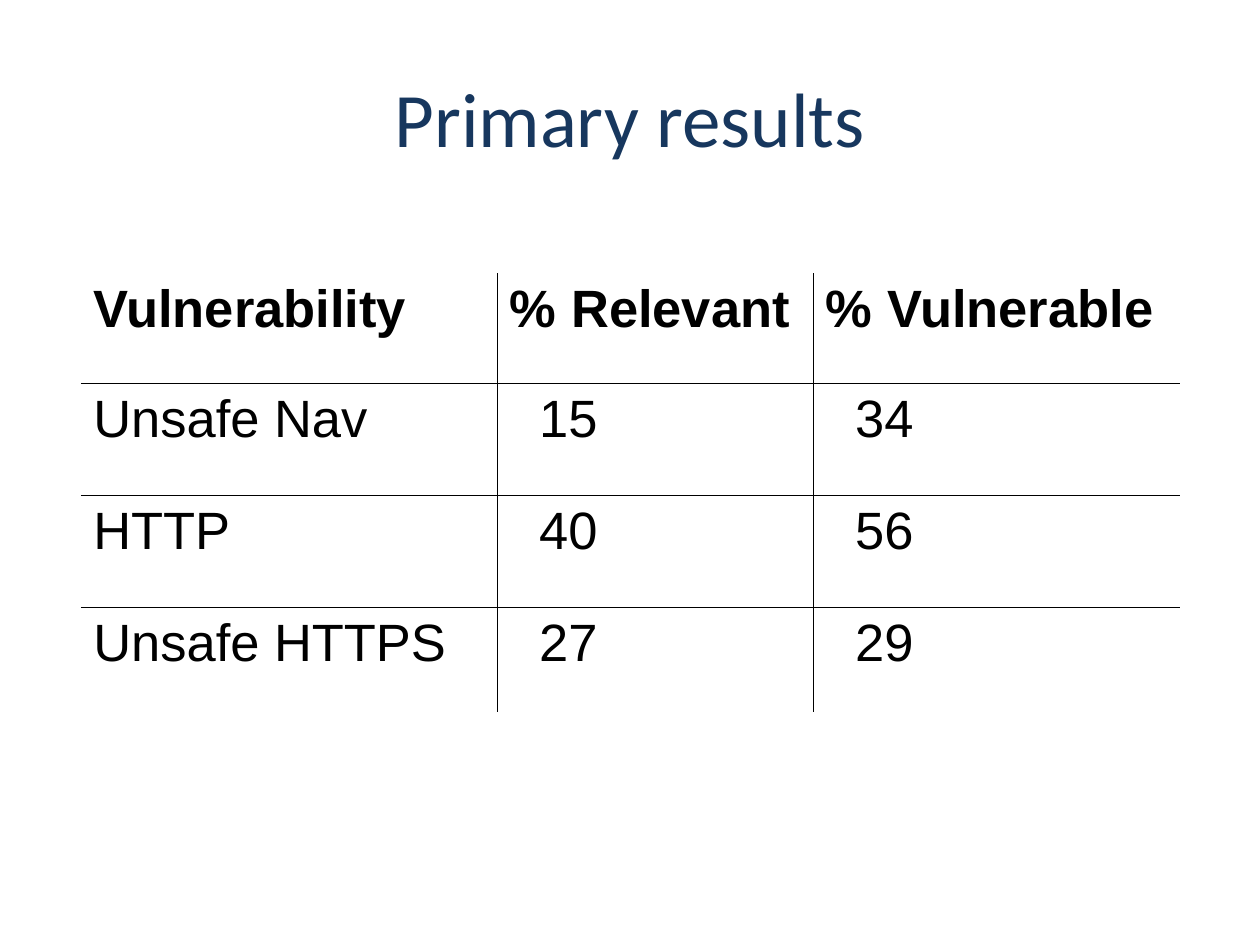
from lxml import etree
from pptx import Presentation
from pptx.dml.color import RGBColor
from pptx.enum.text import MSO_ANCHOR, PP_ALIGN
from pptx.oxml.ns import qn
from pptx.util import Cm, Pt

CENTER = PP_ALIGN.CENTER
MIDDLE = MSO_ANCHOR.MIDDLE
NAVY = RGBColor(0x17, 0x37, 0x5E)
BLACK = RGBColor(0x00, 0x00, 0x00)

RESULTS = [
    ("Vulnerability", "% Relevant", "% Vulnerable"),
    ("Unsafe Nav", "15", "34"),
    ("HTTP", "40", "56"),
    ("Unsafe HTTPS", "27", "29"),
]
COLUMN_WIDTHS = [8.4, 6.37, 7.38]
ROW_HEIGHTS = [2.22, 2.26, 2.26, 2.11]


def set_borders(cell, visible_sides):
    """Rule the sides named in visible_sides (of L, R, T, B) and blank the rest."""
    properties = cell._tc.get_or_add_tcPr()
    for side in "LRTB":
        line = etree.SubElement(properties, qn(f"a:ln{side}"), w=str(Pt(1)))
        if side in visible_sides:
            fill = etree.SubElement(line, qn("a:solidFill"))
            etree.SubElement(fill, qn("a:srgbClr"), val=str(BLACK))
        else:
            etree.SubElement(line, qn("a:noFill"))


prs = Presentation()
prs.slide_width = Cm(25.4)
prs.slide_height = Cm(19.05)
slide = prs.slides.add_slide(prs.slide_layouts[6])

title = slide.shapes.add_textbox(Cm(1.27), Cm(0.76), Cm(22.86), Cm(3.18))
title.text_frame.word_wrap = True
title.text_frame.vertical_anchor = MIDDLE
heading = title.text_frame.paragraphs[0]
heading.text = "Primary results"
heading.alignment = CENTER
heading.font.name = "Calibri"
heading.font.size = Pt(44)
heading.font.color.rgb = NAVY

last_row = len(RESULTS) - 1
last_column = len(COLUMN_WIDTHS) - 1
results = slide.shapes.add_table(
    len(RESULTS), len(COLUMN_WIDTHS), Cm(1.63), Cm(5.51),
    Cm(sum(COLUMN_WIDTHS)), Cm(sum(ROW_HEIGHTS))).table
results.first_row = False
results.horz_banding = False
for column, width in zip(results.columns, COLUMN_WIDTHS):
    column.width = Cm(width)

for r, (values, height) in enumerate(zip(RESULTS, ROW_HEIGHTS)):
    results.rows[r].height = Cm(height)
    for c, value in enumerate(values):
        cell = results.cell(r, c)
        # Only the inner grid lines show
        inner_sides = {"L": c > 0, "R": c < last_column,
                       "T": r > 0, "B": r < last_row}
        set_borders(cell, [side for side, inner in inner_sides.items() if inner])
        cell.fill.background()
        is_number = r > 0 and c > 0
        cell.margin_left = Cm(0.84 if is_number else 0.25)
        entry = cell.text_frame.paragraphs[0]
        entry.text = value
        entry.font.name = "Arial"
        entry.font.size = Pt(30)
        entry.font.bold = r == 0
        entry.font.color.rgb = BLACK

prs.save("out.pptx")
